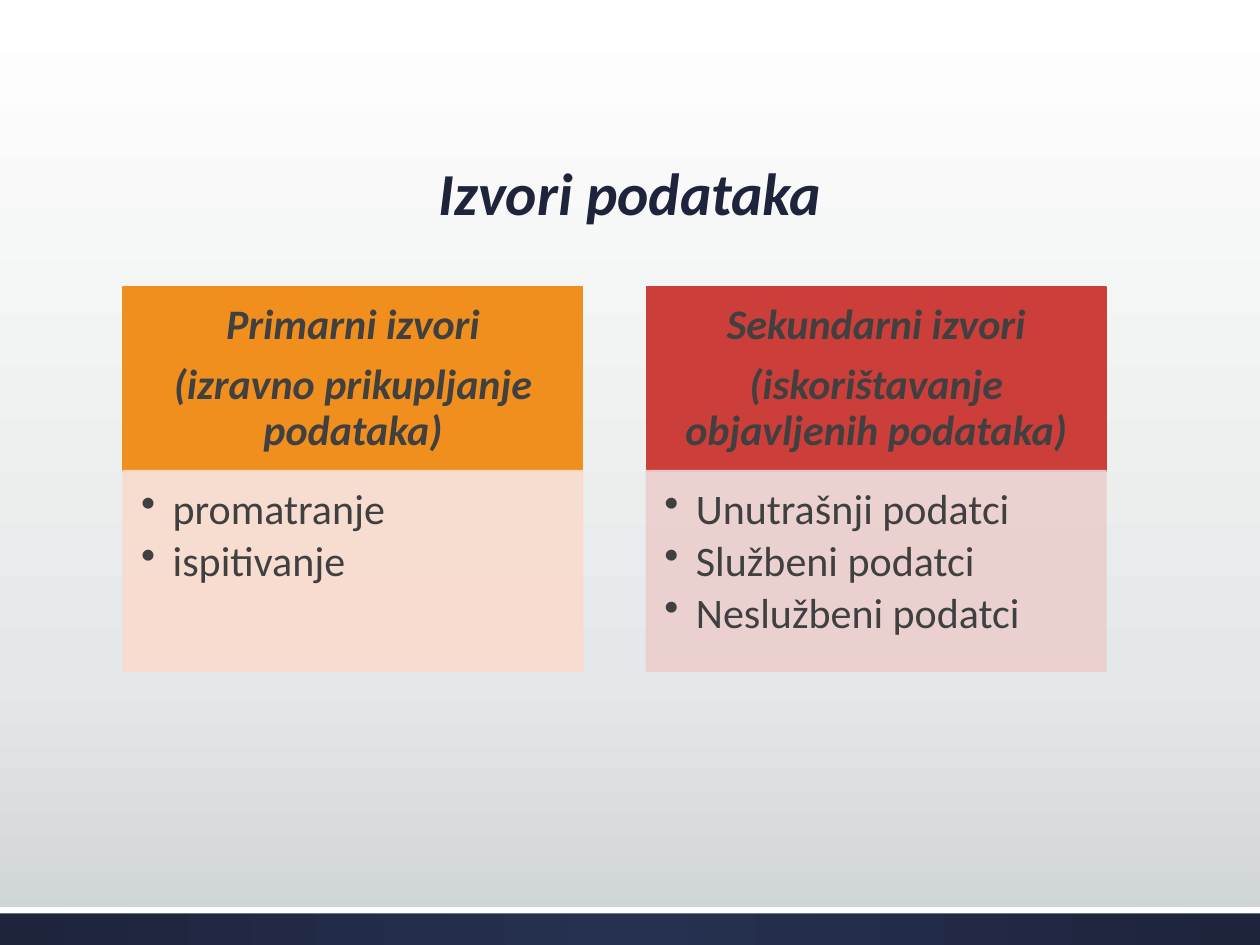
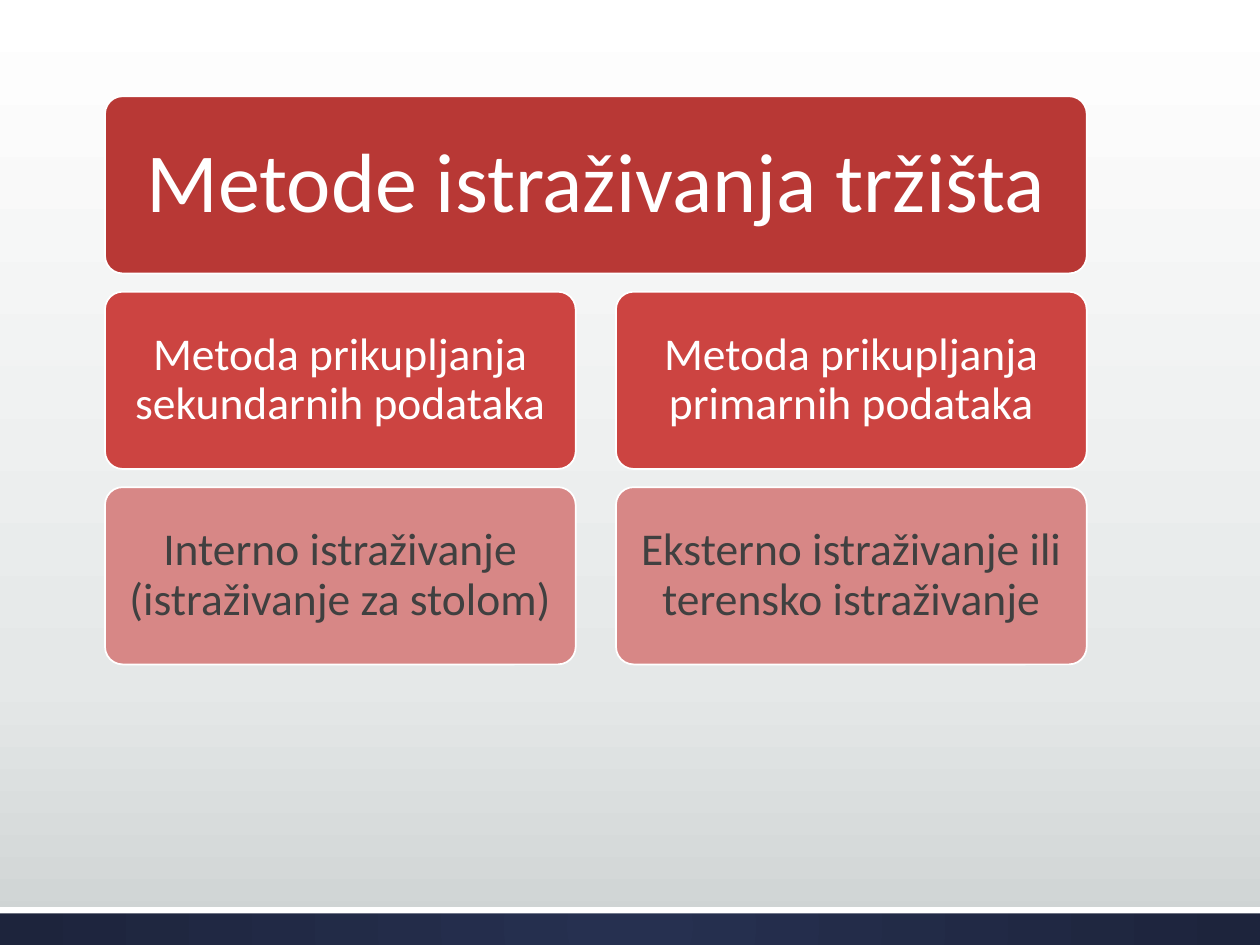
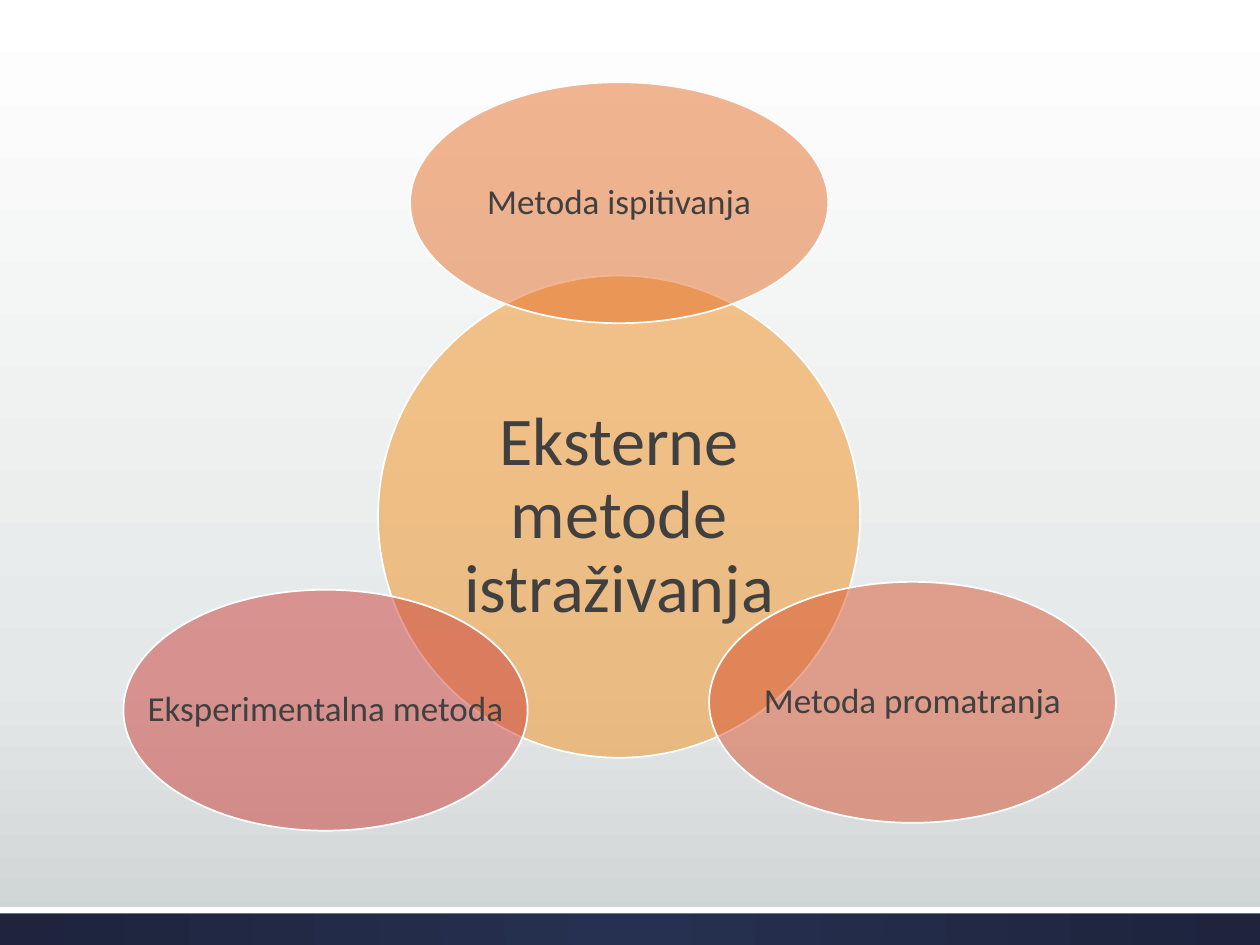
import copy

from lxml import etree
from pptx import Presentation
from pptx.dml.color import RGBColor
from pptx.enum import shapes, text
from pptx.oxml.ns import qn
from pptx.util import Pt


class Theme:
    font = "Calibri"
    navy, ink, white = "1D243C", "404040", "FFFFFF"
    sky = [(0, "FFFFFF"), (0.72, "E5E8E8"), (1, "CDD2D2")]
    glow = [(0, "263050"), (1, "1D243C")]
    amber, orange, rust, red = "F08F1E", "E46D27", "D85130", "CB3E3A"
    peach, pink = "F9DBCD", "ECCECE"
    deep, mid, pale = "B83835", "CC4441", "D78786"
    title, hero, hub, step, body, node = 34, 48, 39, 26, 24, 20


def blend(fill, host, stops):
    """Give fill a gradient with the listed stops; host is its element."""
    fill.gradient()
    group = host.xpath(".//a:gsLst")[0]
    while len(group) < len(stops):
        group.append(copy.deepcopy(group[-1]))
    for stop, (place, color) in zip(fill.gradient_stops, stops):
        stop.position = place
        stop.color.rgb = RGBColor.from_string(color)


def block(page, kind, box, lines, fill, edge, size=Theme.body,
          ink=Theme.ink, pad=(0, 0, 0, 0), gap=0.35, alpha=100):
    """Draw a filled shape with centred text; gap is a share of the size."""
    shape = page.shapes.add_shape(kind, *map(Pt, box))
    shape.shadow.inherit = False
    shape.fill.solid()
    shape.fill.fore_color.rgb = RGBColor.from_string(fill)
    shape.line.color.rgb = RGBColor.from_string(edge)
    shape.line.width = Pt(1)
    if alpha < 100:
        for tone in shape.element.spPr.xpath(f".//a:srgbClr[@val='{fill}']"):
            etree.SubElement(tone, qn("a:alpha"), val=str(alpha * 1000))
    frame = shape.text_frame
    frame.text = "\n".join(lines)
    frame.word_wrap = True
    frame.vertical_anchor = text.MSO_ANCHOR.MIDDLE
    (frame.margin_left, frame.margin_top,
     frame.margin_right, frame.margin_bottom) = map(Pt, pad)
    for para in frame.paragraphs:
        para.alignment = text.PP_ALIGN.CENTER
        para.line_spacing = 0.9
        para.space_after = Pt(size * gap)
        for run in para.runs:
            run.font.name, run.font.size = Theme.font, Pt(size)
            run.font.color.rgb = RGBColor.from_string(ink)
    return shape


deck = Presentation()
deck.slide_width, deck.slide_height = Pt(720), Pt(540)
master = deck.slide_master
RECT = shapes.MSO_SHAPE.RECTANGLE
ROUND = shapes.MSO_SHAPE.ROUNDED_RECTANGLE
OVAL = shapes.MSO_SHAPE.OVAL

# Slide 1: sources of data
page = deck.slides.add_slide(deck.slide_layouts[5])

# Shared background and footer bands, moved to the master
blend(master.background.fill, master.element, Theme.sky)
master.background.fill.gradient_angle = 270
tree = master.element.cSld.spTree
for spot, high in enumerate((21.6, 3.6)):
    band = page.shapes.add_shape(RECT, 0, Pt(518.4), Pt(720), Pt(high))
    band.shadow.inherit = False
    band.line.fill.background()
    if spot == 0:
        blend(band.fill, band.element, Theme.glow)
        lin = band.element.xpath(".//a:lin")[0]
        ring = etree.Element(qn("a:path"))
        ring.set("path", "circle")
        etree.SubElement(ring, qn("a:fillToRect"),
                         dict.fromkeys("ltrb", "50000"))
        lin.getparent().replace(lin, ring)
    else:
        band.fill.solid()
        band.fill.fore_color.rgb = RGBColor.from_string(Theme.white)
    tree.insert(2 + spot, band.element)

# Title
title = page.shapes.title
title.left, title.top, title.width, title.height = map(
    Pt, (79.2, 36.7, 561.6, 97.2))
title.text_frame.text = "Izvori podataka"
title.text_frame.vertical_anchor = text.MSO_ANCHOR.BOTTOM
para = title.text_frame.paragraphs[0]
para.alignment, para.line_spacing = text.PP_ALIGN.CENTER, 0.9
font = para.runs[0].font
font.name, font.size, font.bold, font.italic = (
    Theme.font, Pt(Theme.title), True, True)
font.color.rgb = RGBColor.from_string(Theme.navy)

# Two columns: heading over bullet list
columns = [
    (Theme.amber, Theme.peach,
     ["Primarni izvori", "(izravno prikupljanje podataka)"],
     ["promatranje", "ispitivanje"]),
    (Theme.red, Theme.pink,
     ["Sekundarni izvori", "(iskorištavanje objavljenih podataka)"],
     ["Unutrašnji podatci", "Službeni podatci", "Neslužbeni podatci"]),
]
for col, (dark, light, head, items) in enumerate(columns):
    left = 70.5 + col * 299
    top = block(page, RECT, (left, 164, 262.5, 105), head, dark, dark,
                pad=(13.7, 7.7, 13.7, 7.7))
    for para in top.text_frame.paragraphs:
        para.runs[0].font.bold = para.runs[0].font.italic = True
    cell = block(page, RECT, (left, 269, 262.5, 114.5), items, light, light,
                 pad=(10.2, 10.2, 13.7, 15.4), gap=0.15, alpha=90)
    cell.text_frame.vertical_anchor = text.MSO_ANCHOR.TOP
    for para in cell.text_frame.paragraphs:
        para.alignment = text.PP_ALIGN.LEFT
        props = para._p.get_or_add_pPr()
        props.set("marL", str(Pt(18)))
        props.set("indent", str(-Pt(18)))
        etree.SubElement(props, qn("a:buChar"), char="•")

# Slide 2: methods of market research
page = deck.slides.add_slide(deck.slide_layouts[6])
wide, high, left, top = 269, 101.3, 60, 55
stepx, stepy = 292, 111.7
hero = block(page, ROUND, (left, top, stepx + wide, high),
             ["Metode istraživanja tržišta"], Theme.deep, Theme.white,
             Theme.hero, Theme.white, (14.4,) * 4)
hero.adjustments[0] = 0.1
grid = [
    (Theme.mid, Theme.white, ["Metoda prikupljanja sekundarnih podataka",
                              "Metoda prikupljanja primarnih podataka"]),
    (Theme.pale, Theme.ink, ["Interno istraživanje (istraživanje za stolom)",
                             "Eksterno istraživanje ili terensko istraživanje"]),
]
for row, (fill, ink, words) in enumerate(grid, 1):
    for col, word in enumerate(words):
        box = (left + col * stepx, top + row * stepy, wide, high)
        cell = block(page, ROUND, box, [word], fill, Theme.white,
                     Theme.step, ink, (7.8,) * 4)
        cell.adjustments[0] = 0.1

# Slide 3: external methods around a hub
page = deck.slides.add_slide(deck.slide_layouts[6])
block(page, OVAL, (216, 157.5, 275.5, 275.5),
      ["Eksterne metode istraživanja"], Theme.amber, Theme.white,
      Theme.hub, pad=(3.6,) * 4, alpha=50)
nodes = [
    (234.3, 47, 239, Theme.orange, "Metoda ispitivanja"),
    (405.2, 332.5, 232.5, Theme.rust, "Metoda promatranja"),
    (70.5, 337, 231, Theme.red, "Eksperimentalna metoda"),
]
for left, top, wide, fill, word in nodes:
    node = block(page, OVAL, (left, top, wide, 137.7), [word], fill,
                 Theme.white, Theme.node, alpha=50)
    node.text_frame.word_wrap = False

deck.save("out.pptx")
